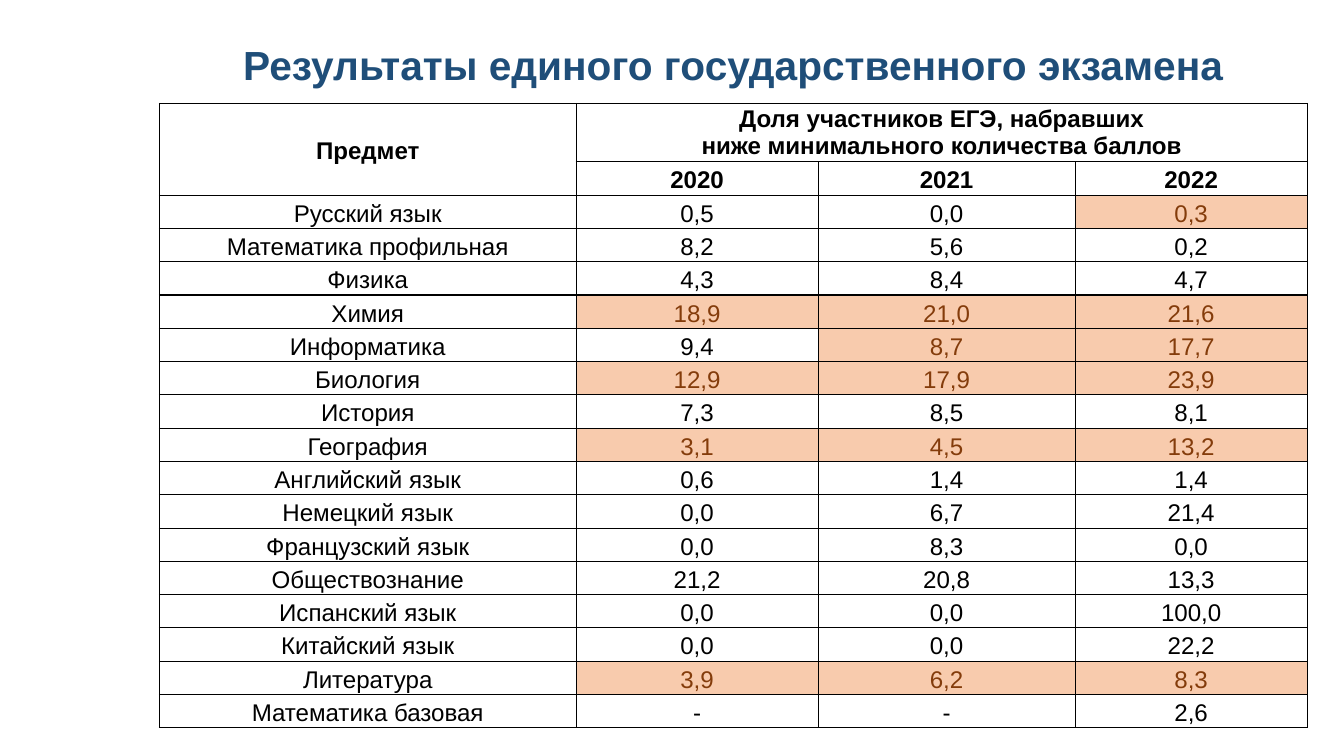
from lxml import etree
from pptx import Presentation
from pptx.dml.color import RGBColor
from pptx.enum import text
from pptx.oxml.ns import qn
from pptx.util import Pt

BLACK, WHITE, BLUE = "000000", "FFFFFF", "1F4E79"
PEACH, BROWN = "F8CBAD", "843C0B"

COL_WIDTHS = [328.2, 190.6, 202.4, 182.8]
HEAD_HEIGHT, ROW_HEIGHT = 46, 26.2
YEARS = ["2020", "2021", "2022"]

# Subject, shares by year, number of last years highlighted
RESULTS = [
    ("Русский язык", "0,5 0,0 0,3", 1),
    ("Математика профильная", "8,2 5,6 0,2", 0),
    ("Физика", "4,3 8,4 4,7", 0),
    ("Химия", "18,9 21,0 21,6", 3),
    ("Информатика", "9,4 8,7 17,7", 2),
    ("Биология", "12,9 17,9 23,9", 3),
    ("История", "7,3 8,5 8,1", 0),
    ("География", "3,1 4,5 13,2", 3),
    ("Английский язык", "0,6 1,4 1,4", 0),
    ("Немецкий язык", "0,0 6,7 21,4", 0),
    ("Французский язык", "0,0 8,3 0,0", 0),
    ("Обществознание", "21,2 20,8 13,3", 0),
    ("Испанский язык", "0,0 0,0 100,0", 0),
    ("Китайский язык", "0,0 0,0 22,2", 0),
    ("Литература", "3,9 6,2 8,3", 3),
    ("Математика базовая", "- - 2,6", 0),
]


def rgb(color):
    return RGBColor.from_string(color)


def set_attrs(obj, values):
    for name, value in values.items():
        setattr(obj, name, value)


def write(tf, content, size, color, bold=False, spacing=None):
    """Fill a text frame with centred Arial, one paragraph per line."""
    tf.text = content
    for p in tf.paragraphs:
        set_attrs(p, {"alignment": text.PP_ALIGN.CENTER, "line_spacing": spacing})
        for r in p.runs:
            set_attrs(r.font, {"name": "Arial", "size": Pt(size), "bold": bold})
            r.font.color.rgb = rgb(color)


def add_title(s, content):
    sp = s.shapes.add_textbox(Pt(181.4), Pt(28), Pt(792.8), Pt(46))
    set_attrs(sp.text_frame, {"word_wrap": False,
                              "auto_size": text.MSO_AUTO_SIZE.SHAPE_TO_FIT_TEXT})
    write(sp.text_frame, content, 32, BLUE, bold=True)


def add_borders(cell):
    tc_pr = cell._tc.get_or_add_tcPr()
    for i, side in enumerate(("lnL", "lnR", "lnT", "lnB")):
        ln = etree.Element(qn(f"a:{side}"), w=str(Pt(1)))
        fill = etree.SubElement(ln, qn("a:solidFill"))
        etree.SubElement(fill, qn("a:srgbClr"), val=BLACK)
        tc_pr.insert(i, ln)


def style_cell(cell):
    set_attrs(cell, {"margin_left": Pt(5), "margin_right": Pt(5),
                     "margin_top": 0, "margin_bottom": 0,
                     "vertical_anchor": text.MSO_ANCHOR.MIDDLE})
    fill_cell(cell, WHITE)
    add_borders(cell)


def fill_cell(cell, color):
    cell.fill.solid()
    cell.fill.fore_color.rgb = rgb(color)


def add_results_table(s):
    heights = [HEAD_HEIGHT] + [ROW_HEIGHT] * (len(RESULTS) + 1)
    table = s.shapes.add_table(len(heights), len(COL_WIDTHS), Pt(125.5), Pt(81.5),
                               Pt(sum(COL_WIDTHS)), Pt(sum(heights))).table
    set_attrs(table, {"first_row": False, "horz_banding": False})
    for col, width in zip(table.columns, COL_WIDTHS):
        col.width = Pt(width)
    for row, height in zip(table.rows, heights):
        row.height = Pt(height)
    for cell in table.iter_cells():
        style_cell(cell)

    table.cell(0, 0).merge(table.cell(1, 0))
    table.cell(0, 1).merge(table.cell(0, 3))
    write(table.cell(0, 0).text_frame, "Предмет", 19, BLACK, True, 1.15)
    write(table.cell(0, 1).text_frame,
          "Доля участников ЕГЭ, набравших\nниже минимального количества баллов",
          19, BLACK, True)
    for c, year in enumerate(YEARS, 1):
        write(table.cell(1, c).text_frame, year, 19, BLACK, True, 1.15)

    for r, (subject, shares, marked) in enumerate(RESULTS, 2):
        for c, value in enumerate([subject] + shares.split()):
            cell = table.cell(r, c)
            is_marked = c >= len(COL_WIDTHS) - marked
            if is_marked:
                fill_cell(cell, PEACH)
            write(cell.text_frame, value, 19, BROWN if is_marked else BLACK,
                  spacing=1.15)


def main():
    prs = Presentation()
    set_attrs(prs, {"slide_width": Pt(1058.4), "slide_height": Pt(595.44)})
    s = prs.slides.add_slide(prs.slide_layouts[6])
    add_title(s, "Результаты единого государственного экзамена")
    add_results_table(s)
    prs.save("out.pptx")


if __name__ == "__main__":
    main()
